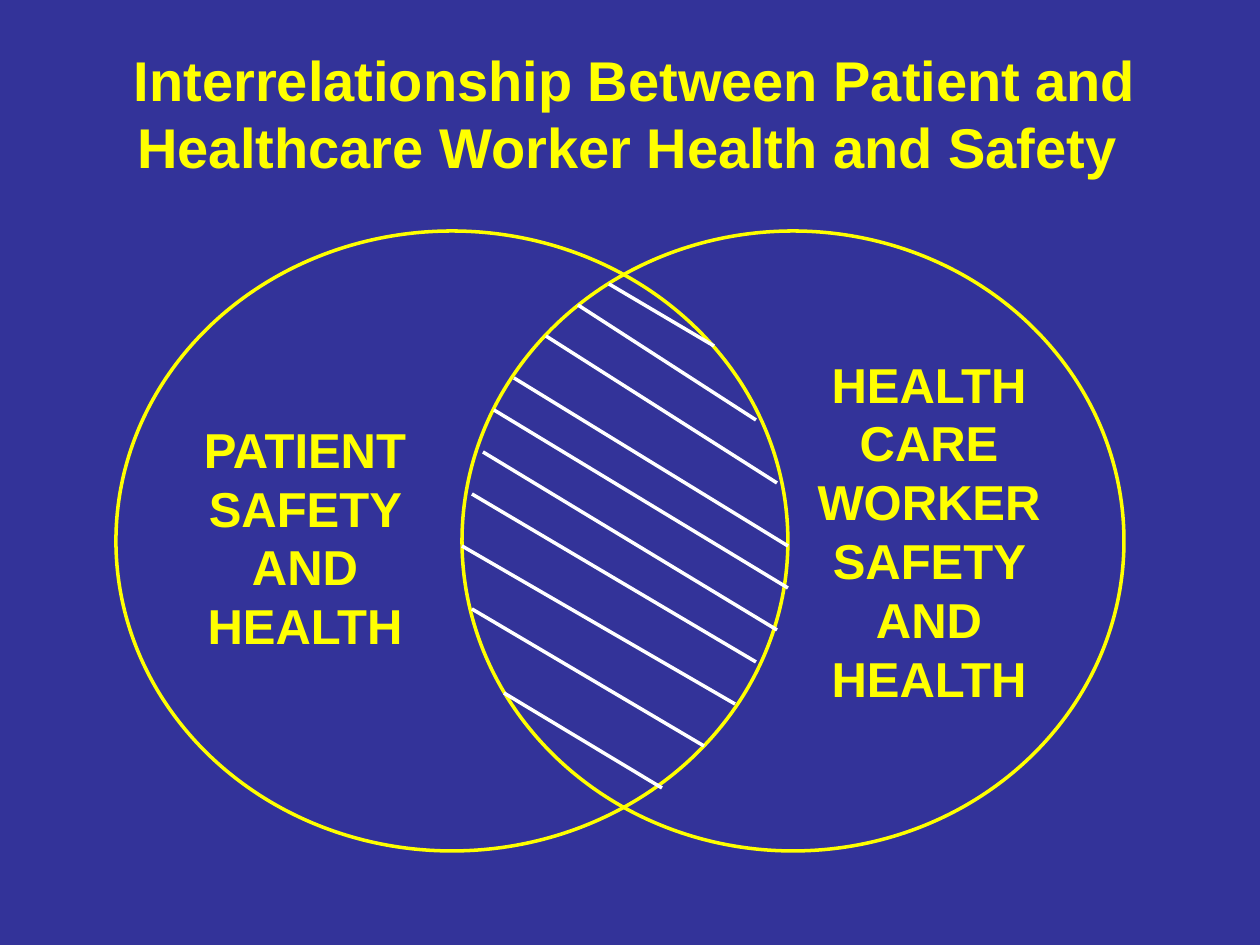
from lxml.etree import SubElement
from pptx import Presentation
from pptx.dml.color import RGBColor
from pptx.enum.shapes import MSO_CONNECTOR, MSO_SHAPE
from pptx.enum.text import MSO_ANCHOR, MSO_AUTO_SIZE, PP_ALIGN
from pptx.oxml.ns import qn
from pptx.util import Emu, Pt

PX = 914400 // 126
COLORS = {"background": "333399", "yellow": "FFFF00", "hatch": "FFFFFF"}


def px(*lengths):
    return [Emu(length * PX) for length in lengths]


def write_text(shape, text, size, anchor=MSO_ANCHOR.MIDDLE, color="yellow"):
    frame = shape.text_frame
    frame.word_wrap = True
    frame.auto_size = MSO_AUTO_SIZE.NONE
    frame.vertical_anchor = anchor
    paragraph = frame.paragraphs[0]
    paragraph.alignment = PP_ALIGN.CENTER
    paragraph.line_spacing = 1.0
    run = paragraph.add_run()
    run.text = text
    run.font.name = "Arial"
    run.font.size = Pt(size)
    run.font.bold = True
    run.font.color.rgb = RGBColor.from_string(COLORS[color])


presentation = Presentation()
presentation.slide_width, presentation.slide_height = px(1260, 945)
slide = presentation.slides.add_slide(presentation.slide_layouts[5])
slide.background.fill.solid()
slide.background.fill.fore_color.rgb = RGBColor.from_string(COLORS["background"])

title = slide.shapes.title
title.left, title.top, title.width, title.height = px(84, 39, 1103, 147)
write_text(
    title,
    "Interrelationship Between Patient and Healthcare Worker Health and Safety ",
    size=32,
)

for left, width in [(116, 672), (462, 662)]:
    circle = slide.shapes.add_shape(MSO_SHAPE.OVAL, *px(left, 231, width, 620))
    circle.shadow.inherit = False
    circle.fill.background()
    circle.line.color.rgb = RGBColor.from_string(COLORS["yellow"])
    circle.line.width = Pt(2)

labels = [
    ("PATIENT SAFETY AND HEALTH", (179, 413, 252, 248), MSO_ANCHOR.MIDDLE),
    ("HEALTH CARE WORKER SAFETY AND HEALTH", (798, 348, 262, 365), MSO_ANCHOR.TOP),
]
for text, box, anchor in labels:
    label = slide.shapes.add_textbox(*px(*box))
    write_text(label, text, size=28, anchor=anchor)

hatch_lines = [
    (609, 284, 714, 346),
    (578, 305, 756, 420),
    (546, 336, 777, 483),
    (514, 378, 788, 546),
    (494, 410, 788, 588),
    (483, 452, 777, 630),
    (472, 494, 756, 662),
    (462, 546, 735, 704),
    (472, 609, 704, 746),
    (504, 693, 662, 788),
]
for ends in hatch_lines:
    hatch = slide.shapes.add_connector(MSO_CONNECTOR.STRAIGHT, *px(*ends))
    hatch.line.color.rgb = RGBColor.from_string(COLORS["hatch"])
    hatch.line.width = Pt(2)
    SubElement(hatch._element.spPr, qn("a:effectLst"))

presentation.save("out.pptx")
